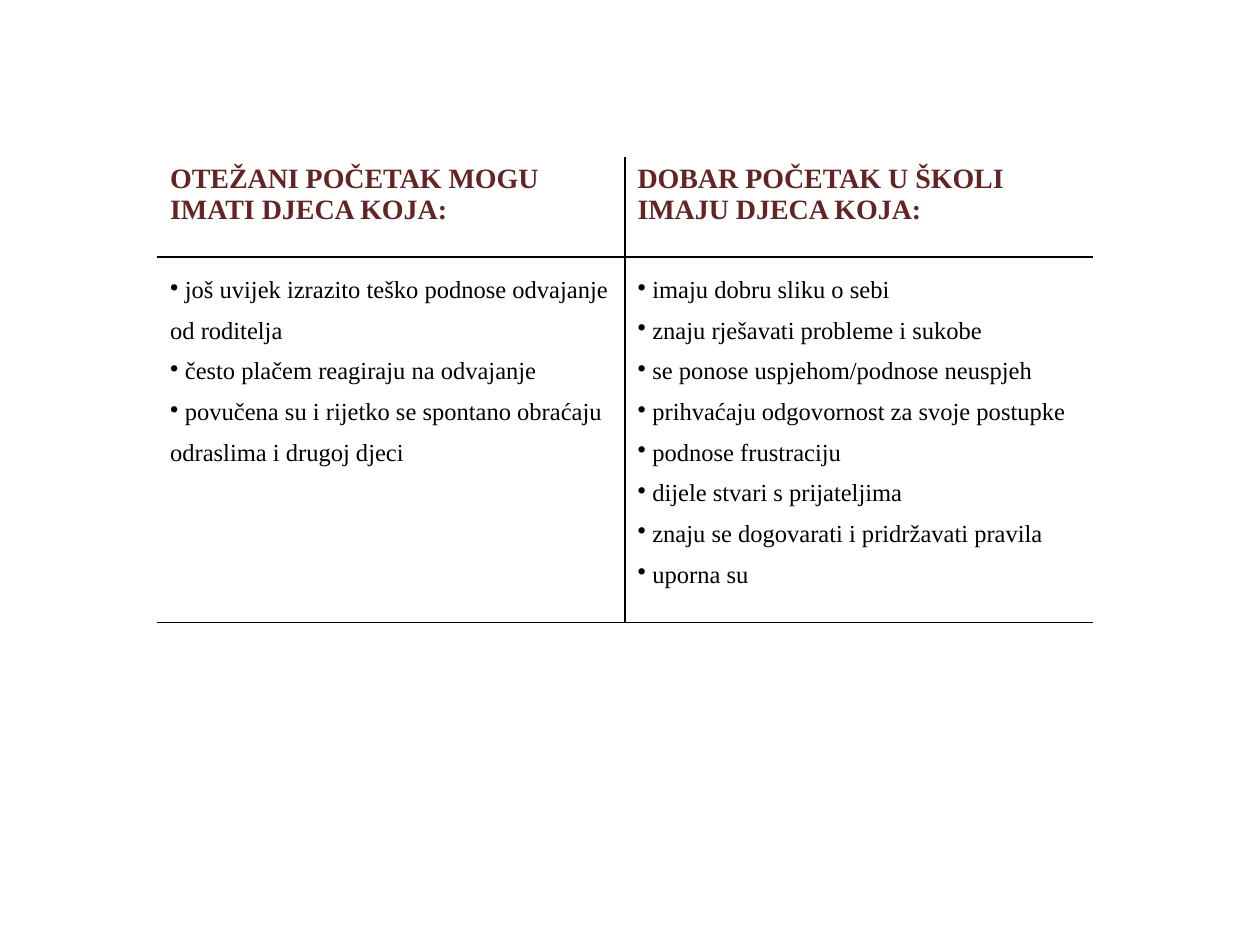
from pptx import Presentation
from pptx.dml.color import RGBColor
from pptx.oxml.ns import qn
from pptx.util import Inches, Pt
from lxml import etree

BLANK_LAYOUT = 6
FONT = "Times New Roman"
WHITE, BLACK, MAROON = "FFFFFF", "000000", "632523"

COLUMNS = [
    ("OTEŽANI POČETAK MOGU IMATI DJECA KOJA:", [
        "još uvijek izrazito teško podnose odvajanje od roditelja",
        "često plačem reagiraju na odvajanje",
        "povučena su i rijetko se spontano obraćaju odraslima i drugoj djeci",
    ]),
    ("DOBAR POČETAK U ŠKOLI IMAJU DJECA KOJA:", [
        "imaju dobru sliku o sebi",
        "znaju rješavati probleme i sukobe",
        "se ponose uspjehom/podnose neuspjeh",
        "prihvaćaju odgovornost za svoje postupke",
        "podnose frustraciju",
        "dijele stvari s prijateljima",
        "znaju se dogovarati i pridržavati pravila",
        "uporna su",
    ]),
]


def color(hex_string):
    return RGBColor.from_string(hex_string)


class SlideBuilder:
    def __init__(self, page):
        self.page = page

    def table(self, left, top, column_widths, row_heights):
        frame = self.page.shapes.add_table(
            len(row_heights), len(column_widths), Inches(left), Inches(top),
            Inches(sum(column_widths)), Inches(sum(row_heights)))
        table = frame.table
        table.first_row = table.horz_banding = False
        for column, width in zip(table.columns, column_widths):
            column.width = Inches(width)
        for row, height in zip(table.rows, row_heights):
            row.height = Inches(height)
        return table

    def borders(self, cell, left, right, top, bottom):
        cell.fill.background()
        properties = cell._tc.get_or_add_tcPr()
        sides = (("a:lnL", left), ("a:lnR", right), ("a:lnT", top), ("a:lnB", bottom))
        for position, (tag, hex_string) in enumerate(sides):
            line = etree.Element(qn(tag), w=str(Pt(1)))
            fill = etree.SubElement(line, qn("a:solidFill"))
            etree.SubElement(fill, qn("a:srgbClr"), val=hex_string)
            properties.insert(position, line)

    def style(self, para, size, hex_string, bold):
        font = para.font
        font.name, font.size, font.bold = FONT, Pt(size), bold
        font.color.rgb = color(hex_string)

    def heading(self, cell, text):
        para = cell.text_frame.paragraphs[0]
        para.text = text
        self.style(para, 16, MAROON, True)

    def bullets(self, cell, items):
        # The bullet sits flush left, so a space parts it from the text
        cell.text = "\n".join(f" {item}" for item in items)
        for para in cell.text_frame.paragraphs:
            para.line_spacing = 1.5
            properties = para._p.get_or_add_pPr()
            properties.set("marL", "0")
            properties.set("indent", "0")
            etree.SubElement(properties, qn("a:buChar"), char="•")
            self.style(para, 14, BLACK, False)


def main():
    deck = Presentation()
    deck.slide_width, deck.slide_height = Inches(10), Inches(7.5)
    builder = SlideBuilder(deck.slides.add_slide(deck.slide_layouts[BLANK_LAYOUT]))

    # Two-column comparison
    table = builder.table(1.25, 1.25, [3.71, 3.71], [0.79, 2.9])
    for index, (heading, items) in enumerate(COLUMNS):
        left, right = (WHITE, BLACK) if index == 0 else (BLACK, WHITE)
        head, body = table.cell(0, index), table.cell(1, index)
        builder.heading(head, heading)
        builder.bullets(body, items)
        builder.borders(head, left, right, WHITE, BLACK)
        builder.borders(body, left, right, BLACK, BLACK)

    deck.save("out.pptx")


if __name__ == "__main__":
    main()
